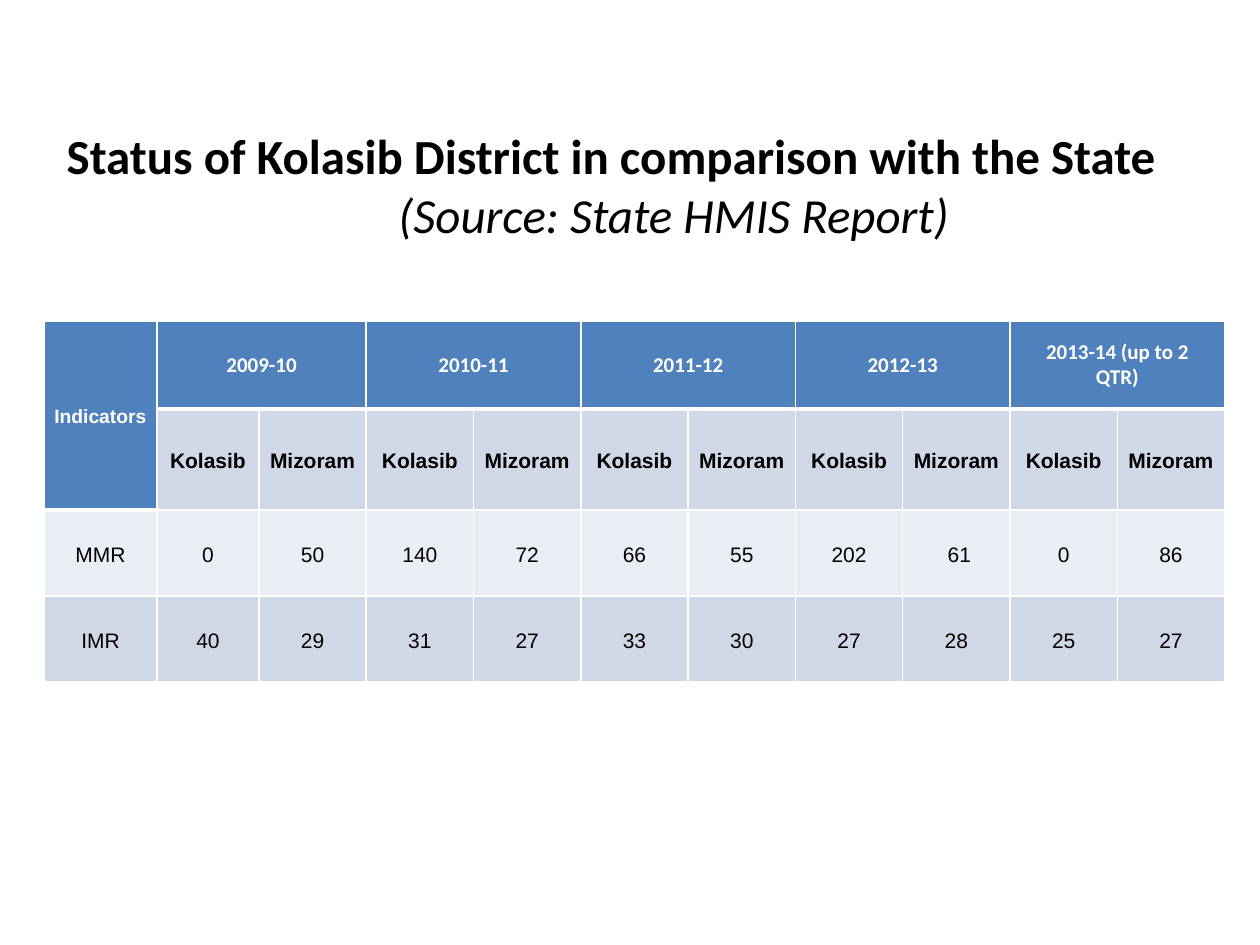
from lxml import etree
from pptx import Presentation
from pptx.dml.color import RGBColor
from pptx.enum.text import MSO_ANCHOR, MSO_AUTO_SIZE, PP_ALIGN
from pptx.oxml.ns import qn
from pptx.util import Emu, Pt

CENTER, LEFT = PP_ALIGN.CENTER, PP_ALIGN.LEFT
MIDDLE = MSO_ANCHOR.MIDDLE
NO_AUTO_SIZE = MSO_AUTO_SIZE.NONE

COLORS = {"header": "4F81BD", "band": "D0D8E8", "light": "E9EDF4",
          "white": "FFFFFF", "black": "000000"}

TITLE = "Status of Kolasib District in comparison with the State"
SOURCE = "(Source: State HMIS Report)"
YEARS = ["2009-10", "2010-11", "2011-12", "2012-13", "2013-14 (up to 2 QTR)"]
AREAS = ["Kolasib", "Mizoram"]
INDICATORS = [
    ["MMR", "0", "50", "140", "72", "66", "55", "202", "\u00a061", "0", "86"],
    ["IMR", "40", "29", "31", "27", "33", "30", "27", "28", "25", "27"],
]

TITLE_BOX = (54, 95, 1171, 179)
SOURCE_INDENT = 68
TABLE_LEFT, TABLE_TOP, TABLE_WIDTH = 44, 321, 1181
FIRST_WIDTHS = [113, 102]
ROW_HEIGHTS = [88, 101, 86, 86]
CELL_MARGIN = 9


def px(value):
    return Emu(round(value * 914400 / 126))


def style_text(paragraph, font_name, size, color, bold=False, italic=False):
    for run in paragraph.runs:
        run.font.name = font_name
        run.font.size = Pt(size)
        run.font.bold = bold
        run.font.italic = italic
        run.font.color.rgb = RGBColor.from_string(COLORS[color])


def set_borders(cell, top, bottom):
    properties = cell._tc.get_or_add_tcPr()
    widths = {"a:lnL": 1, "a:lnR": 1, "a:lnT": top, "a:lnB": bottom}
    for position, (tag, width) in enumerate(widths.items()):
        line = etree.Element(qn(tag), w=str(Pt(width)))
        fill = etree.SubElement(line, qn("a:solidFill"))
        etree.SubElement(fill, qn("a:srgbClr"), val=COLORS["white"])
        properties.insert(position, line)


def add_title(slide):
    title = slide.shapes.title
    title.left, title.top, title.width, title.height = map(px, TITLE_BOX)
    frame = title.text_frame
    frame.text = TITLE
    frame.word_wrap = True
    frame.auto_size = NO_AUTO_SIZE
    frame.vertical_anchor = MIDDLE
    heading = frame.paragraphs[0]
    heading.alignment = LEFT
    style_text(heading, "Calibri", 28, "black", bold=True)
    source = frame.add_paragraph()
    source.text = SOURCE
    source.alignment = CENTER
    source._p.get_or_add_pPr().set("marL", str(px(SOURCE_INDENT)))
    style_text(source, "Calibri", 28, "black", italic=True)


def style_cell(cell, row, column):
    is_header = row == 0 or (row == 1 and column == 0)
    is_year = row == 0 and column > 0
    below_header = (row == 1 and column > 0) or (row == 2 and column == 0)
    fill = "header" if is_header else "light" if row == 2 else "band"
    cell.fill.solid()
    cell.fill.fore_color.rgb = RGBColor.from_string(COLORS[fill])
    cell.vertical_anchor = MIDDLE
    set_borders(cell, 3 if below_header else 1, 3 if is_header else 1)
    paragraph = cell.text_frame.paragraphs[0]
    paragraph.alignment = CENTER
    if not is_year:
        cell.margin_left = cell.margin_right = px(CELL_MARGIN)
        cell.margin_top = cell.margin_bottom = 0
        paragraph.line_spacing = 1.15
    style_text(paragraph, "Calibri" if is_year else "Arial",
               11 if is_header and column == 0 else 12,
               "white" if is_header else "black", bold=row < 2)


def add_indicator_table(slide):
    year_cells = [text for year in YEARS for text in (year, "")]
    rows = [["Indicators"] + year_cells, [""] + AREAS * len(YEARS)] + INDICATORS
    column_count = len(rows[0])
    other_count = column_count - len(FIRST_WIDTHS)
    other_width = (TABLE_WIDTH - sum(FIRST_WIDTHS)) / other_count
    widths = FIRST_WIDTHS + [other_width] * other_count
    table = slide.shapes.add_table(
        len(rows), column_count, px(TABLE_LEFT), px(TABLE_TOP),
        px(TABLE_WIDTH), px(sum(ROW_HEIGHTS))).table
    for column, width in zip(table.columns, widths):
        column.width = px(width)
    for table_row, height in zip(table.rows, ROW_HEIGHTS):
        table_row.height = px(height)
    table.cell(0, 0).merge(table.cell(1, 0))
    for column in range(1, column_count, len(AREAS)):
        table.cell(0, column).merge(table.cell(0, column + len(AREAS) - 1))
    for row, texts in enumerate(rows):
        for column, text in enumerate(texts):
            cell = table.cell(row, column)
            cell.text = text
            style_cell(cell, row, column)


def main():
    presentation = Presentation()
    presentation.slide_width, presentation.slide_height = px(1260), px(945)
    slide = presentation.slides.add_slide(presentation.slide_layouts[5])
    add_title(slide)
    add_indicator_table(slide)
    presentation.save("out.pptx")


if __name__ == "__main__":
    main()
